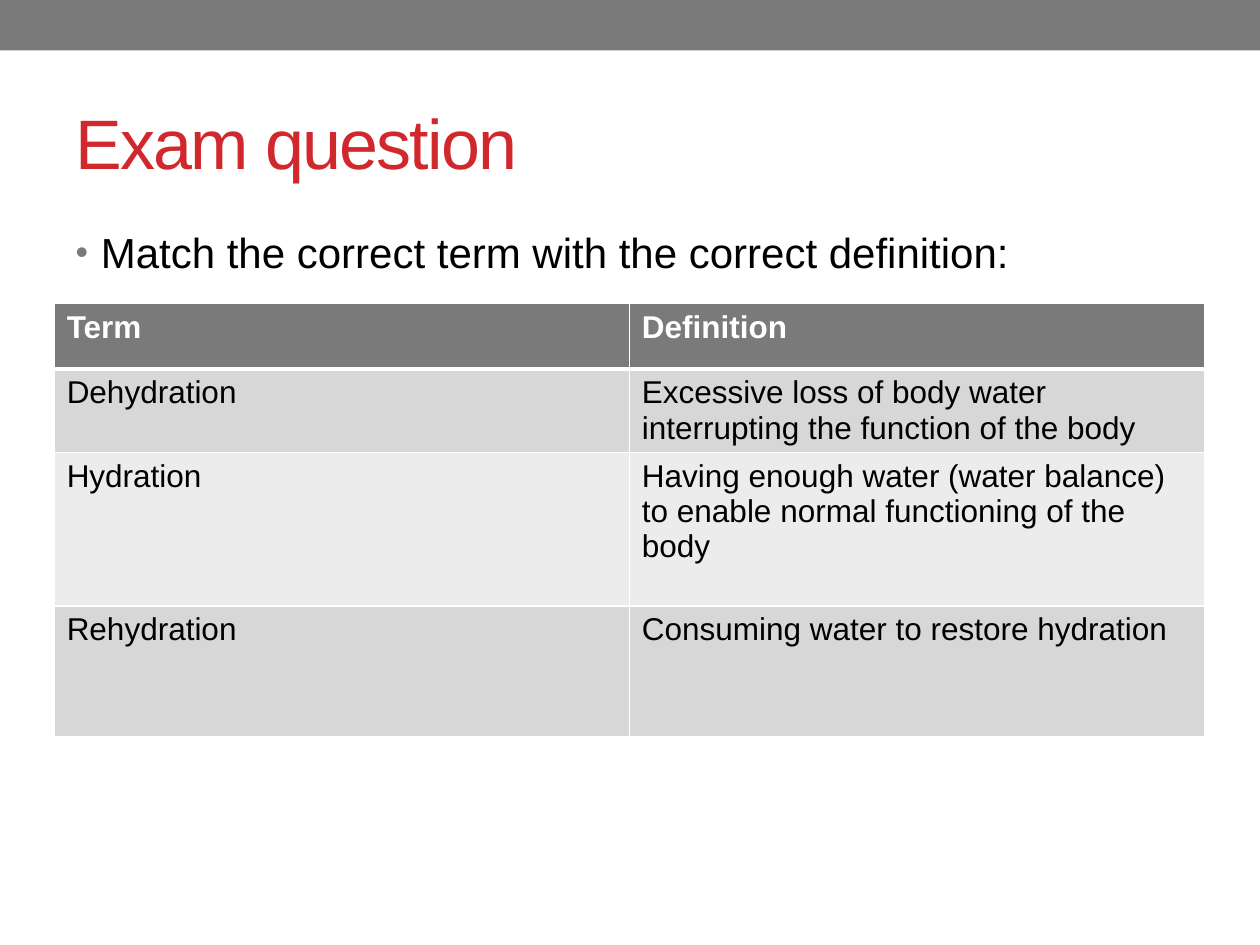
from pptx import Presentation
from pptx.dml.color import RGBColor
from pptx.enum.shapes import MSO_SHAPE as Shape
from pptx.enum.text import MSO_ANCHOR as Anchor, PP_ALIGN as Align
from pptx.oxml.ns import qn
from pptx.util import Inches, Pt
from lxml.etree import SubElement

GREY, RED, BLACK, WHITE = "7A7A7A", "D1282E", "000000", "FFFFFF"
BANDS = ("D7D7D7", "ECECEC")

ROWS = [
    ("Term", "Definition"),
    ("Dehydration",
     "Excessive loss of body water interrupting the function of the body"),
    ("Hydration",
     "Having enough water (water balance) to enable normal functioning of the body"),
    ("Rehydration", "Consuming water to restore hydration"),
]
ROW_HEIGHTS = (0.52, 0.66, 1.22, 1.04)


def color(code):
    return RGBColor.from_string(code)


def place(shape, left, top, width, height):
    shape.left, shape.top = Inches(left), Inches(top)
    shape.width, shape.height = Inches(width), Inches(height)


class Page:
    font = "Arial"

    def __init__(self, deck, layout):
        self.slide = deck.slides.add_slide(deck.slide_layouts[layout])

    def add_text(self, para, text, size, code, bold=False):
        span = para.add_run()
        span.text = text
        span.font.name, span.font.size, span.font.bold = self.font, Pt(size), bold
        span.font.color.rgb = color(code)
        return span

    def bar(self, *area):
        bar = self.slide.shapes.add_shape(Shape.RECTANGLE, *map(Inches, area))
        bar.shadow.inherit = False
        bar.fill.solid()
        bar.fill.fore_color.rgb = color(GREY)
        bar.line.fill.background()

    def title(self, text, *area):
        box = self.slide.shapes.title
        place(box, *area)
        box.text_frame.vertical_anchor = Anchor.MIDDLE
        para = box.text_frame.paragraphs[0]
        para.alignment = Align.LEFT
        span = self.add_text(para, text, 40, RED)
        span._r.get_or_add_rPr().set("spc", "-100")

    def bullet_list(self, items, *area):
        box = self.slide.placeholders[1]
        place(box, *area)
        frame = box.text_frame
        for index, item in enumerate(items):
            para = frame.add_paragraph() if index else frame.paragraphs[0]
            self.bullet(para)
            self.add_text(para, item, 24, BLACK)

    def bullet(self, para):
        props = para._p.get_or_add_pPr()
        props.set("marL", str(Inches(0.2)))
        props.set("indent", str(Inches(-0.2)))
        tint = SubElement(props, qn("a:buClr"))
        SubElement(tint, qn("a:srgbClr"), val=GREY)
        SubElement(props, qn("a:buSzPct"), val="85000")
        SubElement(props, qn("a:buFont"), typeface=self.font)
        SubElement(props, qn("a:buChar"), char="•")

    def table(self, rows, heights, left, top, width):
        area = map(Inches, (left, top, width, sum(heights)))
        table = self.slide.shapes.add_table(len(rows), len(rows[0]), *area).table
        for row, height in zip(table.rows, heights):
            row.height = Inches(height)
        for r, texts in enumerate(rows):
            header = r == 0
            for c, text in enumerate(texts):
                cell = table.cell(r, c)
                self.borders(cell, top=3 if r == 1 else 1, bottom=3 if header else 1)
                cell.fill.solid()
                cell.fill.fore_color.rgb = color(GREY if header else BANDS[(r - 1) % 2])
                self.add_text(cell.text_frame.paragraphs[0], text, 18,
                              WHITE if header else BLACK, bold=header)

    def borders(self, cell, top, bottom):
        props = cell._tc.get_or_add_tcPr()
        for side, weight in (("L", 1), ("R", 1), ("T", top), ("B", bottom)):
            line = SubElement(props, qn(f"a:ln{side}"), w=str(Pt(weight)))
            fill = SubElement(line, qn("a:solidFill"))
            SubElement(fill, qn("a:srgbClr"), val=WHITE)


def main():
    deck = Presentation()
    deck.slide_width, deck.slide_height = Inches(10), Inches(7.5)
    page = Page(deck, layout=1)
    page.bar(0, 0, 10, 0.4)
    page.title("Exam question", 0.5, 0.58, 9, 1.08)
    page.bullet_list(["Match the correct term with the correct definition:"],
                     0.5, 1.75, 9, 5.33)
    page.table(ROWS, ROW_HEIGHTS, 0.43, 2.41, 9.13)
    deck.save("out.pptx")


if __name__ == "__main__":
    main()
